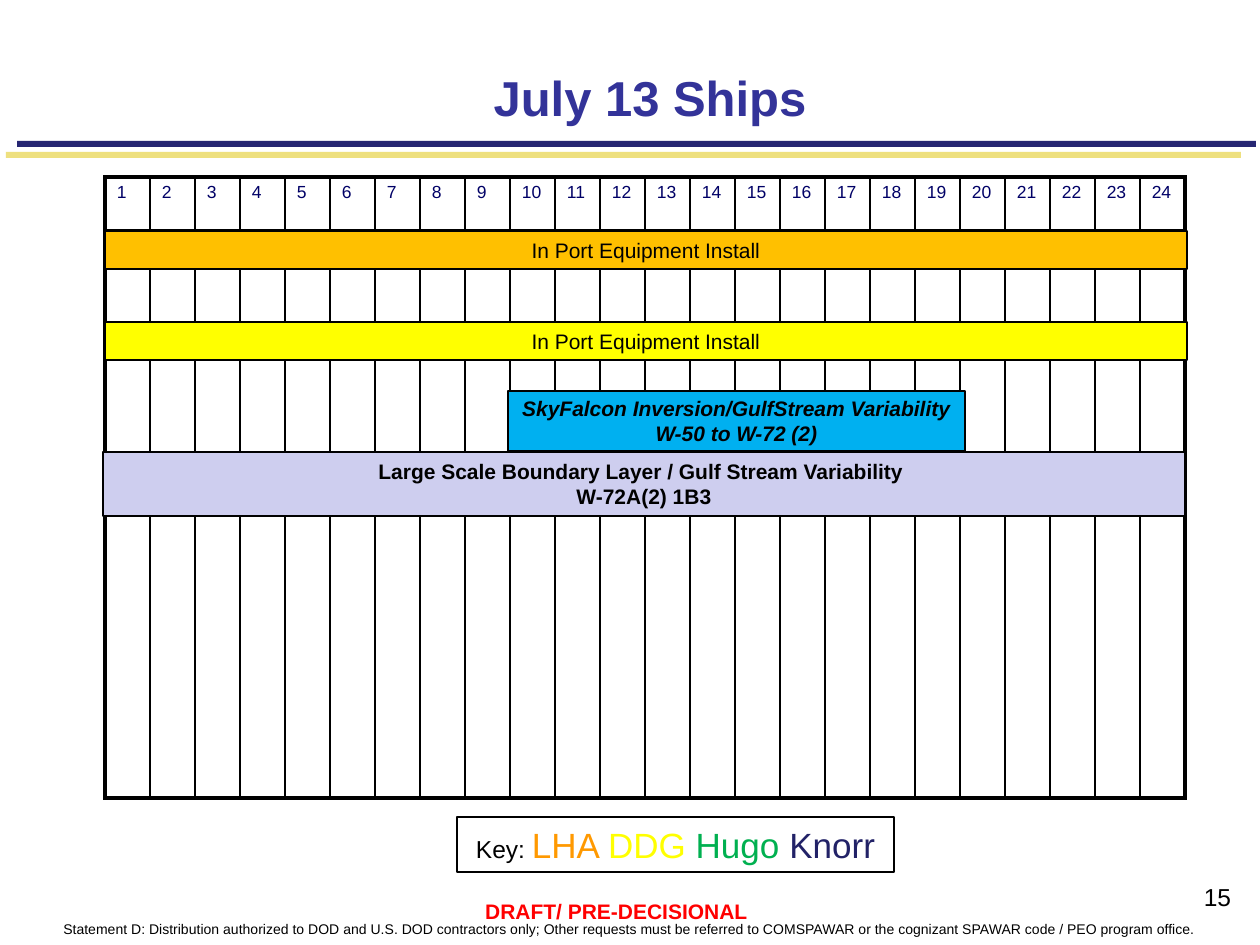
import lxml.etree
import pptx
import pptx.dml.color
import pptx.enum.shapes
import pptx.enum.text
import pptx.oxml.ns
import pptx.util

RGB = pptx.dml.color.RGBColor
ALIGN = pptx.enum.text.PP_ALIGN
ANCHOR = pptx.enum.text.MSO_ANCHOR
RECTANGLE = pptx.enum.shapes.MSO_SHAPE.RECTANGLE

BLACK = RGB(0x00, 0x00, 0x00)
WHITE = RGB(0xFF, 0xFF, 0xFF)
RED = RGB(0xFF, 0x00, 0x00)
YELLOW = RGB(0xFF, 0xFF, 0x00)
AMBER = RGB(0xFF, 0xC0, 0x00)
ORANGE = RGB(0xFF, 0x99, 0x00)
GREEN = RGB(0x00, 0xB0, 0x50)
SKY = RGB(0x00, 0xB0, 0xF0)
LAVENDER = RGB(0xCE, 0xCE, 0xEF)
NAVY = RGB(0x26, 0x26, 0x73)
KNORR_NAVY = RGB(0x22, 0x22, 0x67)
DAY_NAVY = RGB(0x00, 0x00, 0x66)
TITLE_BLUE = RGB(0x33, 0x33, 0x99)
GOLD = RGB(0xEE, 0xE0, 0x7F)

EMU_PER_PX = 914400 / 126
DAYS = 24


def px(length):
    return pptx.util.Emu(round(length * EMU_PER_PX))


def write(frame, lines, size=12, color=BLACK, bold=False, italic=False,
          align=ALIGN.CENTER):
    """Fill a frame; each line is a string or a list of (text, size, color)."""
    for index, line in enumerate(lines):
        para = frame.add_paragraph() if index else frame.paragraphs[0]
        para.alignment = align
        spans = [(line, size, color)] if isinstance(line, str) else line
        for text, span_size, span_color in spans:
            span = para.add_run()
            span.text = text
            span.font.name = "Arial"
            span.font.size = pptx.util.Pt(span_size)
            span.font.bold = bold
            span.font.italic = italic
            span.font.color.rgb = span_color


def set_borders(cell, **widths):
    """Draw black cell borders; widths in points, keyed by L, R, T and B."""
    properties = cell._tc.get_or_add_tcPr()
    for side in "LRTB":
        line = lxml.etree.SubElement(
            properties, pptx.oxml.ns.qn(f"a:ln{side}"),
            w=str(pptx.util.Pt(widths[side])))
        fill = lxml.etree.SubElement(line, pptx.oxml.ns.qn("a:solidFill"))
        lxml.etree.SubElement(fill, pptx.oxml.ns.qn("a:srgbClr"),
                              val=str(BLACK))


class PageBuilder:
    inset_x, inset_y = 12, 6
    inner_border, outer_border = 1, 2.25

    def __init__(self, page):
        self.page = page

    def prepare(self, frame, anchor, wrap, inset_y):
        frame.word_wrap = wrap
        frame.vertical_anchor = anchor
        frame.margin_left = frame.margin_right = px(self.inset_x)
        frame.margin_top = frame.margin_bottom = px(inset_y)

    def text(self, area, line, anchor=ANCHOR.TOP, wrap=True, inset_y=inset_y,
             **style):
        box = self.page.shapes.add_textbox(*map(px, area))
        self.prepare(box.text_frame, anchor, wrap, inset_y)
        write(box.text_frame, [line], **style)

    def bar(self, area, fill, lines=(), line_width=0, wrap=True, **style):
        box = self.page.shapes.add_shape(RECTANGLE, *map(px, area))
        box.shadow.inherit = False
        box.fill.solid()
        box.fill.fore_color.rgb = fill
        if line_width:
            box.line.color.rgb = BLACK
            box.line.width = pptx.util.Pt(line_width)
        else:
            box.line.fill.background()
        self.prepare(box.text_frame, ANCHOR.MIDDLE, wrap, self.inset_y)
        write(box.text_frame, lines, **style)

    def calendar(self, left, top, day_width, row_heights):
        rows = len(row_heights)
        table = self.page.shapes.add_table(
            rows, DAYS, px(left), px(top),
            px(day_width * DAYS), px(sum(row_heights))).table
        table.first_row = table.horz_banding = False
        for column in table.columns:
            column.width = px(day_width)
        for row, height in enumerate(row_heights):
            table.rows[row].height = px(height)
            for day in range(DAYS):
                cell = table.cell(row, day)
                edges = {"L": day == 0, "R": day == DAYS - 1,
                         "T": row == 0, "B": row == rows - 1}
                set_borders(cell, **{
                    side: self.outer_border if outer else self.inner_border
                    for side, outer in edges.items()})
                cell.fill.background()
                cell.margin_left, cell.margin_right = px(self.inset_x), 0
                cell.margin_top = cell.margin_bottom = px(self.inset_y)
                if row == 0:
                    write(cell.text_frame, [str(day + 1)], size=10,
                          color=DAY_NAVY, align=ALIGN.LEFT)


def main():
    deck = pptx.Presentation()
    deck.slide_width, deck.slide_height = px(1260), px(945)
    builder = PageBuilder(deck.slides.add_slide(deck.slide_layouts[6]))

    builder.text((0, 915, 1260, 29),
                 "Statement D: Distribution authorized to DOD and U.S. DOD "
                 "contractors only; Other requests must be referred to "
                 "COMSPAWAR or the cognizant SPAWAR code / PEO program office.",
                 size=8)
    builder.bar((6, 152, 1235, 6), GOLD)
    builder.bar((17, 141, 1239, 6), NAVY)
    builder.text((1174, 876, 87, 63), "15", size=14)
    builder.text((471, 893, 291, 38), "DRAFT/ PRE-DECISIONAL",
                 wrap=False, color=RED, bold=True)
    builder.text((242, 58, 816, 68), "July 13 Ships", anchor=ANCHOR.BOTTOM,
                 inset_y=0, size=28, color=TITLE_BLUE, bold=True)

    builder.calendar(105, 177, 45, (53, 568))
    for top, fill in ((231, AMBER), (322, YELLOW)):
        builder.bar((105, top, 1082, 38), fill, ["In Port Equipment Install"],
                    line_width=1.5)
    builder.bar((457, 817, 437, 55), WHITE,
                [[("Key: ", 14, BLACK), ("LHA ", 20, ORANGE),
                  ("DDG", 20, YELLOW), (" Hugo ", 20, GREEN),
                  ("Knorr", 20, KNORR_NAVY)]],
                line_width=0.75, wrap=False)
    builder.bar((103, 452, 1082, 64), LAVENDER,
                ["Large Scale Boundary Layer / Gulf Stream Variability ",
                 "W-72A(2) 1B3"],
                line_width=1.5, bold=True)
    builder.bar((508, 391, 457, 60), SKY,
                ["SkyFalcon Inversion/GulfStream Variability",
                 "W-50 to W-72 (2)"],
                line_width=1.5, wrap=False, bold=True, italic=True)

    deck.save("out.pptx")


if __name__ == "__main__":
    main()
